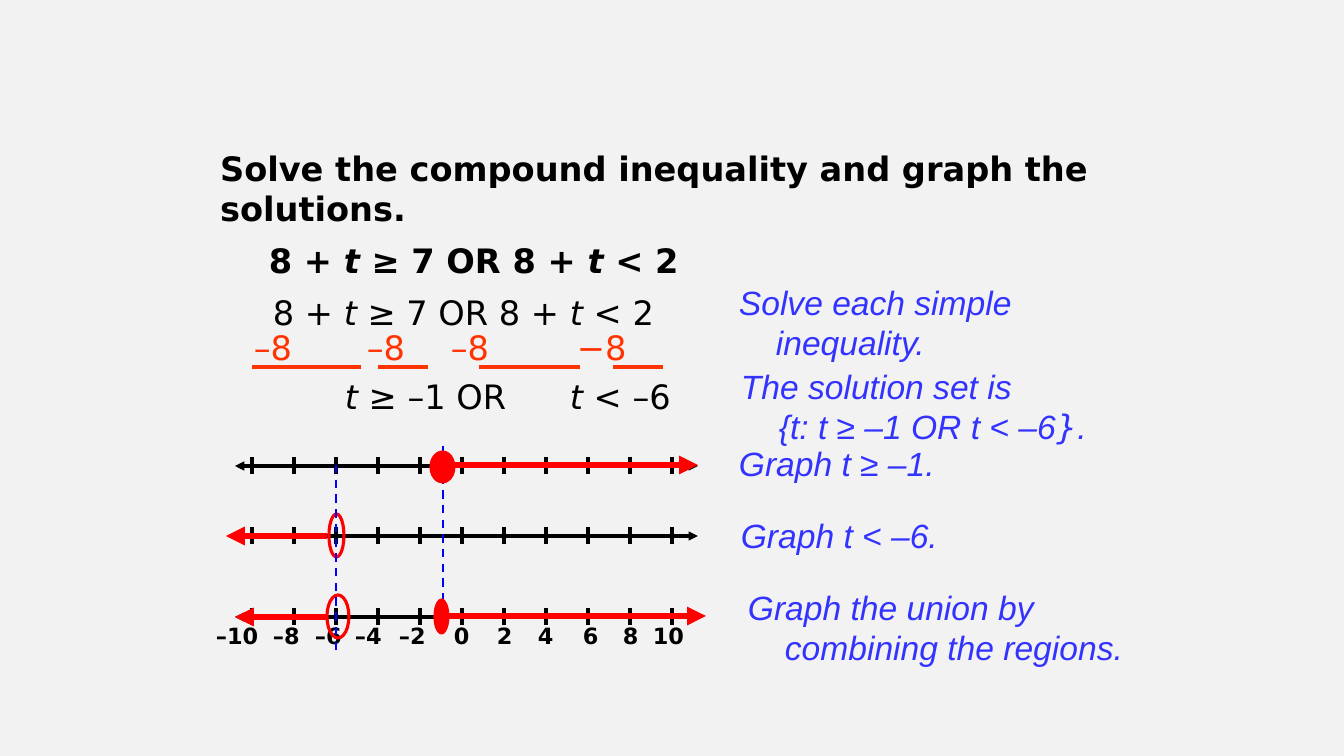
from lxml import etree
from pptx import Presentation
from pptx.dml.color import RGBColor
from pptx.enum.dml import MSO_LINE
from pptx.enum.shapes import MSO_CONNECTOR, MSO_SHAPE
from pptx.enum.text import MSO_ANCHOR, MSO_AUTO_SIZE, PP_ALIGN
from pptx.oxml.ns import qn
from pptx.util import Pt

PX = 914400 / 100.8
STRAIGHT = MSO_CONNECTOR.STRAIGHT
OVAL = MSO_SHAPE.FLOWCHART_CONNECTOR
DASH = MSO_LINE.DASH
TOP = MSO_ANCHOR.TOP
LEFT = PP_ALIGN.LEFT
NO_AUTOFIT = MSO_AUTO_SIZE.NONE
MATH_FONT = "DejaVu Sans"
NOTE_FONT = "Arial"
COLORS = {
    "background": "F2F2F2",
    "text": "000000",
    "step": "FF3300",
    "note": "3333FF",
    "solution": "FF0000",
    "guide": "0000FF",
}

presentation = Presentation()
presentation.slide_width = round(1344 * PX)
presentation.slide_height = round(756 * PX)
slide = presentation.slides.add_slide(presentation.slide_layouts[5])
slide.background.fill.solid()
slide.background.fill.fore_color.rgb = RGBColor.from_string(COLORS["background"])


def write_text(text, box, shape=None, size=24, font=MATH_FONT, color="text",
               bold=False, italic=False, wrap=False, hanging=0, tabs=()):
    left, top, width, height = [round(length * PX) for length in box]
    if shape is None:
        shape = slide.shapes.add_textbox(left, top, width, height)
    else:
        shape.left, shape.top, shape.width, shape.height = left, top, width, height
    frame = shape.text_frame
    frame.word_wrap = wrap
    frame.auto_size = NO_AUTOFIT
    frame.vertical_anchor = TOP
    for index, line in enumerate(text.split("\n")):
        paragraph = frame.add_paragraph() if index else frame.paragraphs[0]
        paragraph.alignment = LEFT
        properties = paragraph._p.get_or_add_pPr()
        if hanging:
            properties.set("marL", str(round(hanging * PX)))
            properties.set("indent", str(round(-hanging * PX)))
        if tabs:
            tab_list = etree.SubElement(properties, qn("a:tabLst"))
            for position in tabs:
                etree.SubElement(tab_list, qn("a:tab"), pos=str(round(position * PX)), algn="l")
        for part, piece in enumerate(line.split("*")):
            if piece:
                run = paragraph.add_run()
                run.text = piece
                run.font.name = font
                run.font.size = Pt(size)
                run.font.bold = bold
                run.font.italic = italic != (part % 2 == 1)
                run.font.color.rgb = RGBColor.from_string(COLORS[color])
    return shape


def draw_line(start, end, color="text", width=2.25, dash=None, arrows=()):
    connector = slide.shapes.add_connector(
        STRAIGHT, *[round(length * PX) for length in (*start, *end)])
    connector.line.color.rgb = RGBColor.from_string(COLORS[color])
    connector.line.width = Pt(width)
    if dash:
        connector.line.dash_style = dash
    outline = connector.line._get_or_add_ln()
    for arrow in arrows:
        etree.SubElement(outline, qn(f"a:{arrow}"), type="triangle")
    etree.SubElement(connector._element.spPr, qn("a:effectLst"))


write_text("Solve the compound inequality and graph the solutions.", (210, 143, 907, 92),
           shape=slide.shapes.title, bold=True, wrap=True)
write_text("8 + *t* ≥ 7 OR 8 + *t* < 2", (259, 235, 437, 50), bold=True)
write_text("8 + *t* ≥ 7 OR 8 + *t* < 2", (263, 287, 415, 50))
write_text("–8\t–8\t–8\t−8", (244, 322, 431, 51), color="step", wrap=True, tabs=(113, 197, 323))
for start, end in [(252, 361), (378, 428), (479, 580), (613, 663)]:
    draw_line((start, 367), (end, 367), color="step")
write_text("*t ≥ *–1 OR\t*t < *–6", (335, 371, 372, 50), wrap=True, tabs=(225,))

AXES = [466, 536, 617]
for axis in AXES:
    draw_line((235, axis), (698, axis), arrows=("headEnd", "tailEnd"))
    for tick in range(11):
        x = 252 + 42 * tick
        draw_line((x, axis - 9), (x, axis + 8))

LABEL_WIDTHS = {1: 36, 2: 52, 3: 76}
LABEL_LEFTS = [206, 263, 305, 345, 389, 444, 487, 528, 573, 613, 643]
for value, left in zip(range(-10, 11, 2), LABEL_LEFTS):
    label = str(value).replace("-", "–")
    write_text(label, (left, 617, LABEL_WIDTHS[len(label)], 37), size=16, bold=True)

draw_line((443, 446), (443, 630), color="guide", width=1.5, dash=DASH)

for box, filled in [((329, 514, 15, 43), False), ((327, 595, 22, 43), False),
                    ((430, 451, 25, 32), True), ((434, 599, 15, 35), True)]:
    endpoint = slide.shapes.add_shape(OVAL, *[round(length * PX) for length in box])
    endpoint.shadow.inherit = False
    endpoint.line.color.rgb = RGBColor.from_string(COLORS["solution"])
    endpoint.line.width = Pt(0.75 if filled else 2.25)
    if filled:
        endpoint.fill.solid()
        endpoint.fill.fore_color.rgb = RGBColor.from_string(COLORS["solution"])
    else:
        endpoint.fill.background()

for start, end, y in [(446, 698, 465), (327, 226, 536), (448, 706, 616), (328, 235, 617)]:
    draw_line((start, y), (end, y), color="solution", width=4.5, arrows=("tailEnd",))

NOTES = [
    ("Solve each simple inequality.", (729, 277, 330, 92), 37),
    ("The solution set is\n\t{t: t ≥ –1 OR t < –6*}*.", (731, 361, 386, 92), 38),
    ("Graph t ≥ –1.", (729, 438, 216, 50), 0),
    ("Graph t < –6.", (731, 510, 217, 50), 0),
    ("Graph the union by combining the regions.", (738, 582, 396, 92), 37),
]
for text, box, hanging in NOTES:
    note = write_text(text, box, font=NOTE_FONT, color="note", italic=True,
                      wrap=hanging > 0, hanging=hanging)
    for paragraph in note.text_frame.paragraphs:
        for run in paragraph.runs:
            if run.text == "}":
                run.font.name = MATH_FONT
                run.font.italic = True

draw_line((336, 465), (336, 650), color="guide", width=1.5, dash=DASH)

presentation.save("out.pptx")
